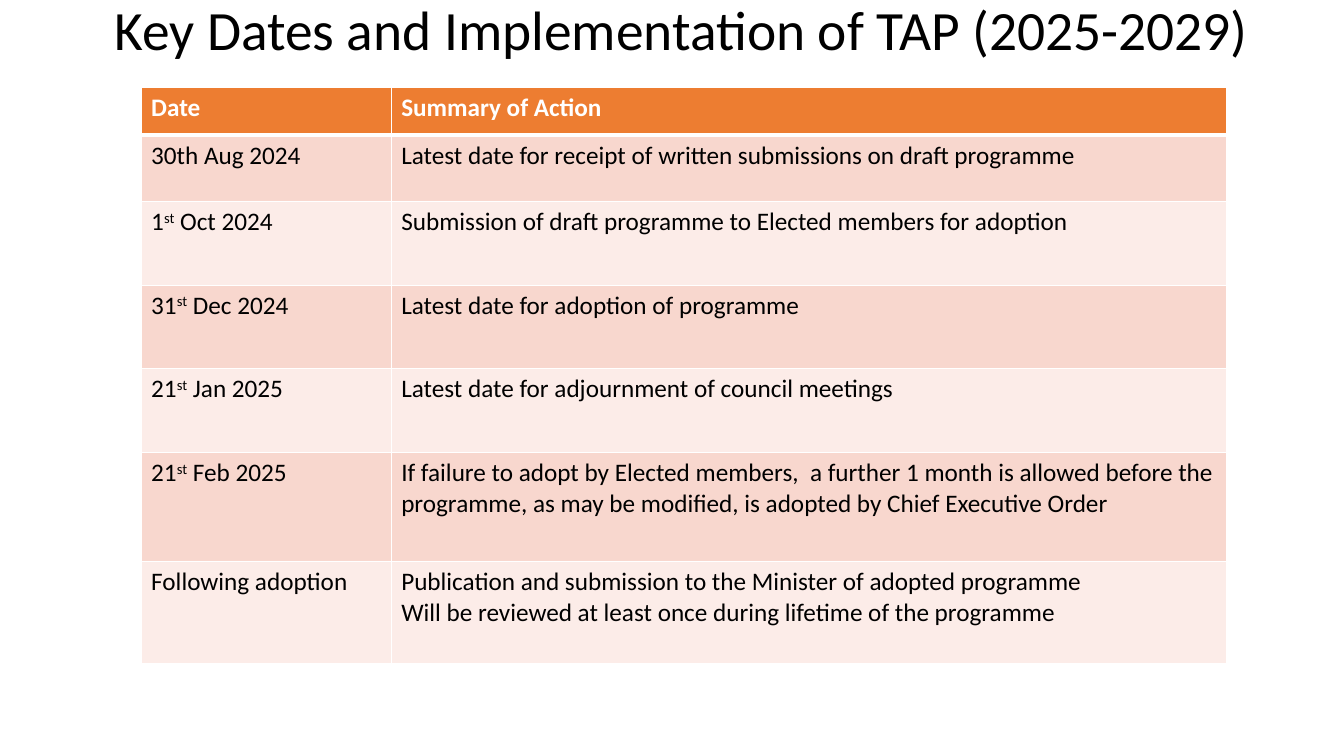
"""Build a slide with a table of key dates for the TAP (2025-2029)."""
from lxml.etree import SubElement
from pptx import Presentation
from pptx.dml.color import RGBColor
from pptx.enum.text import MSO_ANCHOR, MSO_AUTO_SIZE, PP_ALIGN
from pptx.oxml.ns import qn
from pptx.util import Pt

PX = 9144
BLACK = RGBColor(0x00, 0x00, 0x00)
WHITE = RGBColor(0xFF, 0xFF, 0xFF)
ORANGE = RGBColor(0xED, 0x7D, 0x31)
PEACH = RGBColor(0xF8, 0xD7, 0xCE)
PALE = RGBColor(0xFC, 0xEC, 0xE8)

COL_WIDTHS = [248, 829]
ROW_HEIGHTS = [47, 66, 83, 83, 83, 108, 101]
ROWS = [
    (["Date"], "Summary of Action"),
    (["30th Aug 2024"], "Latest date for receipt of written submissions on draft programme"),
    (["1", "st", " Oct 2024"], "Submission of draft programme to Elected members for adoption"),
    (["31", "st", " Dec 2024"], "Latest date for adoption of programme"),
    (["21", "st", " Jan 2025"], "Latest date for adjournment of council meetings"),
    (["21", "st", " Feb 2025"],
     "If failure to adopt by Elected members,  a further 1 month is allowed before the "
     "programme, as may be modified, is adopted by Chief Executive Order"),
    (["Following adoption"],
     "Publication and submission to the Minister of adopted programme\n"
     "Will be reviewed at least once during lifetime of the programme"),
]


def add_run(p, text, size, color, bold=False):
    r = p.add_run()
    r.text = text
    for name, value in {"name": "Calibri", "size": Pt(size), "bold": bold}.items():
        setattr(r.font, name, value)
    r.font.color.rgb = color
    return r


def add_border(cell, side, width):
    ln = SubElement(cell._tc.get_or_add_tcPr(), qn(f"a:ln{side}"), w=str(Pt(width)))
    SubElement(SubElement(ln, qn("a:solidFill")), qn("a:srgbClr"), val=str(WHITE))


prs = Presentation()
prs.slide_width, prs.slide_height = 1333 * PX, 750 * PX
s = prs.slides.add_slide(prs.slide_layouts[5])

title = s.shapes.title
title.left, title.top, title.width, title.height = [v * PX for v in (101, -2, 1150, 69)]
tf = title.text_frame
for name, value in {"word_wrap": True, "auto_size": MSO_AUTO_SIZE.NONE,
                    "vertical_anchor": MSO_ANCHOR.MIDDLE}.items():
    setattr(tf, name, value)
p = tf.paragraphs[0]
p.alignment, p.line_spacing = PP_ALIGN.CENTER, 0.9
add_run(p, "Key Dates and Implementation of TAP (2025-2029)", 39.6, BLACK)

table = s.shapes.add_table(len(ROWS), len(COL_WIDTHS), 140 * PX, 87 * PX,
                           sum(COL_WIDTHS) * PX, sum(ROW_HEIGHTS) * PX).table
for col, width in zip(table.columns, COL_WIDTHS):
    col.width = width * PX
for row, height in zip(table.rows, ROW_HEIGHTS):
    row.height = height * PX

for i, (date, action) in enumerate(ROWS):
    header = i == 0
    fill = ORANGE if header else PEACH if i % 2 else PALE
    color = WHITE if header else BLACK
    date_cell, action_cell = table.cell(i, 0), table.cell(i, 1)
    for cell in (date_cell, action_cell):
        for side, width in {"L": 1, "R": 1, "T": 3 if i == 1 else 1, "B": 3 if header else 1}.items():
            add_border(cell, side, width)
        cell.fill.solid()
        cell.fill.fore_color.rgb = fill
    for part in date:
        r = add_run(date_cell.text_frame.paragraphs[0], part, 18, color, header)
        if part == "st":
            r._r.get_or_add_rPr().set("baseline", "30000")
    tf = action_cell.text_frame
    for n, line in enumerate(action.split("\n")):
        p = tf.add_paragraph() if n else tf.paragraphs[0]
        add_run(p, line, 18, color, header)

prs.save("out.pptx")
